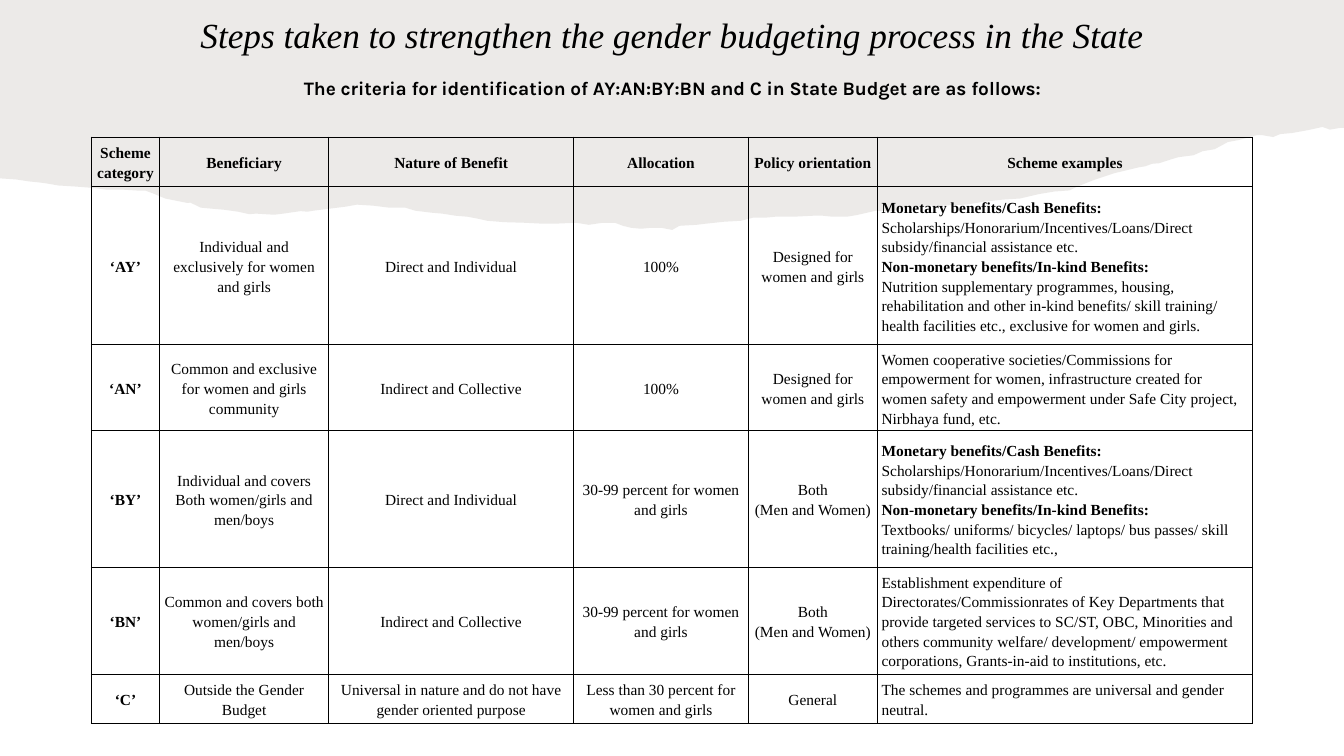
from lxml import etree
from pptx import Presentation
from pptx import util as u
from pptx.dml.color import RGBColor
from pptx.enum import text
from pptx.oxml import ns

Pt = u.Pt
BLACK = RGBColor(0x00, 0x00, 0x00)
TAUPE = RGBColor(0x82, 0x76, 0x6A)
SERIF = "Times New Roman"
CENTER = text.PP_ALIGN.CENTER


def style(span, size, font=SERIF, bold=False, italic=False):
    span.font.size = Pt(size)
    span.font.name = font
    span.font.bold = bold
    span.font.italic = italic
    span.font.color.rgb = BLACK


def border(cell):
    """Draw a thin black line on all four sides of a table cell."""
    properties = cell._tc.get_or_add_tcPr()
    for place, side in enumerate(("lnL", "lnR", "lnT", "lnB")):
        line = etree.Element(ns.qn("a:" + side), w=str(Pt(1)))
        fill = etree.SubElement(line, ns.qn("a:solidFill"))
        etree.SubElement(fill, ns.qn("a:srgbClr"), val=str(BLACK))
        properties.insert(place, line)


deck = Presentation()
deck.slide_width, deck.slide_height = Pt(960), Pt(540)
page = deck.slides.add_slide(deck.slide_layouts[6])

# Torn paper band: the ragged lower edge runs from right to left
TORN_EDGE = [
    (960, 91.4), (957, 91.4), (950, 92.6), (944.6, 90.7), (934.6, 92.9),
    (923, 95), (914.4, 95.8), (909.4, 97.9), (901.4, 96.5), (897.8, 96.5),
    (884.9, 100), (877, 101.5), (867.6, 106.6), (859, 108), (852.5, 110.9),
    (841.7, 112.3), (836.6, 113.8), (828, 116.6), (823, 117), (818, 118.8),
    (813.6, 119.5), (795.6, 123.8), (780.5, 128.9), (769.7, 133.2),
    (763.9, 136), (753, 136.8), (742.3, 138.6), (728.6, 141.8),
    (716.4, 142.6), (703.4, 144), (689.8, 146.2), (670, 146.9), (658, 146.9),
    (647.3, 148.3), (635, 151.2), (625.7, 150.5), (612, 153.6), (604.8, 154.8),
    (594.7, 154.8), (587, 154), (582.5, 154), (566.6, 154.8), (553.7, 154.8),
    (546.5, 155.5), (537.8, 155.5), (529.2, 157.7), (517, 158.4), (504, 159.8),
    (497.5, 160.6), (485.3, 161.3), (480.2, 164.2), (472.3, 162.7),
    (465, 162.7), (457.9, 163.4), (450.7, 162.7), (445, 161.3), (439.2, 159.1),
    (430.6, 159.1), (420.5, 160.6), (411.8, 159.1), (396, 159.8), (388, 159.8),
    (374.4, 159.1), (360, 158.7), (348, 157.7), (341.3, 156.2), (334, 154.8),
    (325.4, 154.1), (316, 152.6), (308, 151.9), (296.6, 150.5), (289.4, 148.3),
    (277.9, 148.3), (266.4, 146.9), (254.9, 146.2), (247, 147.6),
    (223.9, 150.5), (219.6, 151.2), (214.6, 150.8), (202.3, 152.6),
    (195.8, 153.4), (182.9, 152.6), (178, 153), (170, 151.2), (164.9, 150.5),
    (159.8, 149.8), (150.5, 149), (143.3, 148.3), (139, 146.2), (136, 144.7),
    (134, 145), (118, 141.8), (109.4, 138.2), (103.7, 136.1), (97.9, 136.1),
    (86.4, 135.4), (75.6, 135.4), (69.1, 134.6), (62.6, 133.9), (53.3, 133.2),
    (41.8, 132.5), (33.1, 131), (28, 130.3), (20.9, 129.6), (11.5, 128.2),
    (0, 127.4),
]
outline = page.shapes.build_freeform(0, 0)
outline.add_line_segments(
    [(Pt(x), Pt(y)) for x, y in [(960, 0)] + TORN_EDGE], close=True)
paper = outline.convert_to_shape()
paper.shadow.inherit = False
paper.line.fill.background()
paper.fill.solid()
paper.fill.fore_color.rgb = TAUPE
tint = paper._element.spPr.find(".//" + ns.qn("a:srgbClr"))
etree.SubElement(tint, ns.qn("a:alpha"), val="15000")

# Headings: wording, place, anchor, line spacing, font
BOTTOM, TOP = text.MSO_ANCHOR.BOTTOM, text.MSO_ANCHOR.TOP
HEADINGS = [
    ("Steps taken to strengthen the gender budgeting process in the State",
     (65.5, 11.5, 829.5, 32.4), BOTTOM, 0.9,
     dict(size=25.2, italic=True)),
    ("The criteria for identification of AY:AN:BY:BN and C in State Budget are as follows:",
     (148.3, 55.4, 663.8, 31), TOP, 0.7,
     dict(size=13.6, font="Karla", bold=True)),
]
for wording, place, anchor, spacing, look in HEADINGS:
    box = page.shapes.add_textbox(*map(Pt, place))
    frame = box.text_frame
    frame.word_wrap = True
    frame.vertical_anchor = anchor
    frame.text = wording
    para = frame.paragraphs[0]
    para.alignment = CENTER
    para.line_spacing = spacing
    style(para.runs[0], **look)

# Criteria table: a cell is one string with a line per paragraph;
# the lead-ins listed here are bold
LEAD_INS = ("Monetary benefits/Cash Benefits:", "Non-monetary benefits/In-kind Benefits:")
CASH = LEAD_INS[0] + " Scholarships/Honorarium/Incentives/Loans/Direct subsidy/financial assistance etc."
IN_KIND = CASH + "\n" + LEAD_INS[1] + "\n"
WOMEN = "Designed for women and girls"
BOTH = "Both\n(Men and Women)"
SHARE = "30-99 percent for women and girls"
ROWS = [
    ("Scheme category", "Beneficiary", "Nature of Benefit", "Allocation",
     "Policy orientation", "Scheme examples"),
    ("‘AY’", "Individual and exclusively for women and girls",
     "Direct and Individual", "100%", WOMEN,
     IN_KIND + "Nutrition supplementary programmes, housing, rehabilitation and other "
     "in-kind benefits/ skill training/ health facilities etc., exclusive for women and girls."),
    ("‘AN’", "Common and exclusive for women and girls community",
     "Indirect and Collective", "100%", WOMEN,
     "Women cooperative societies/Commissions for empowerment for women, "
     "infrastructure created for women safety and empowerment under Safe City "
     "project, Nirbhaya fund, etc."),
    ("‘BY’", "Individual and covers Both women/girls and men/boys",
     "Direct and Individual", SHARE, BOTH,
     IN_KIND + "Textbooks/ uniforms/ bicycles/ laptops/ bus passes/ skill "
     "training/health facilities etc.,"),
    ("‘BN’", "Common and covers both women/girls and men/boys",
     "Indirect and Collective", SHARE, BOTH,
     "Establishment expenditure of Directorates/Commissionrates of Key Departments "
     "that provide targeted services to SC/ST, OBC, Minorities and others community "
     "welfare/ development/ empowerment corporations, Grants-in-aid to institutions, etc."),
    ("‘C’", "Outside the Gender Budget",
     "Universal in nature and do not have gender oriented purpose",
     "Less than 30 percent for women and girls", "General",
     "The schemes and programmes are universal and gender neutral."),
]
WIDTHS = [48.7, 120.8, 175, 124.8, 92.2, 268]
HEIGHTS = [35.2, 113.2, 50.4, 97.7, 66.2, 35.2]

holder = page.shapes.add_table(len(ROWS), len(WIDTHS), Pt(65.3), Pt(98),
                               Pt(sum(WIDTHS)), Pt(sum(HEIGHTS)))
criteria = holder.table
criteria.first_row = criteria.horz_banding = False
for column, width in zip(criteria.columns, WIDTHS):
    column.width = Pt(width)
for row, height in zip(criteria.rows, HEIGHTS):
    row.height = Pt(height)

for r, entries in enumerate(ROWS):
    for c, entry in enumerate(entries):
        cell = criteria.cell(r, c)
        cell.fill.background()
        border(cell)
        cell.vertical_anchor = text.MSO_ANCHOR.MIDDLE
        cell.margin_left = cell.margin_right = Pt(3)
        cell.margin_top, cell.margin_bottom = Pt(0.5), Pt(0)
        cell.text_frame.text = entry
        heading = r == 0 or c == 0
        for para in cell.text_frame.paragraphs:
            para.line_spacing = 1.15
            para.alignment = text.PP_ALIGN.LEFT if r and c == 5 else CENTER
            span = para.runs[0]
            for lead_in in LEAD_INS:
                if span.text.startswith(lead_in):
                    rest = span.text[len(lead_in):]
                    span.text = lead_in
                    style(span, 11, bold=True)
                    if rest:
                        span = para.add_run()
                        span.text = rest
                        style(span, 11)
                    break
            else:
                style(span, 11, bold=heading)

deck.save("out.pptx")
